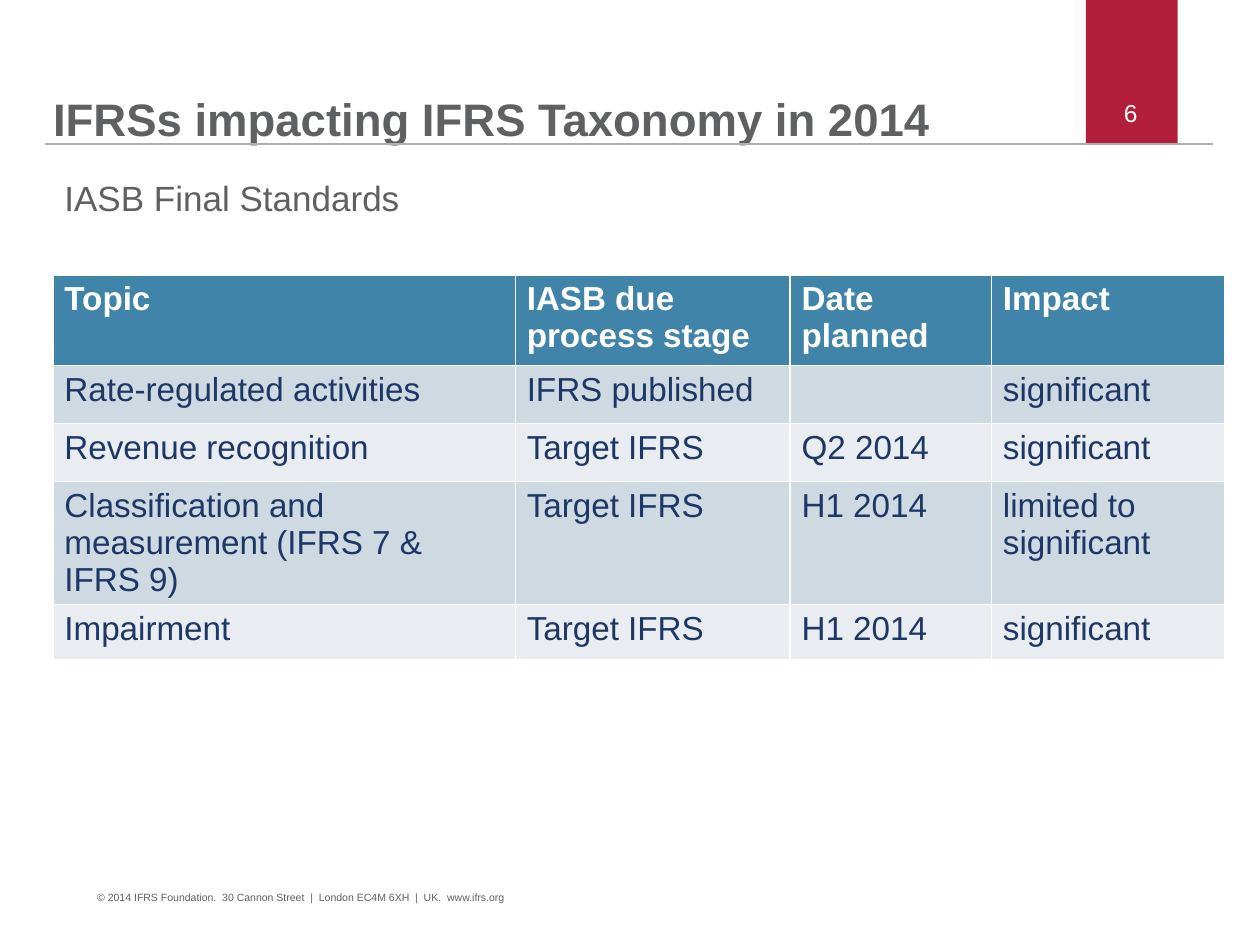
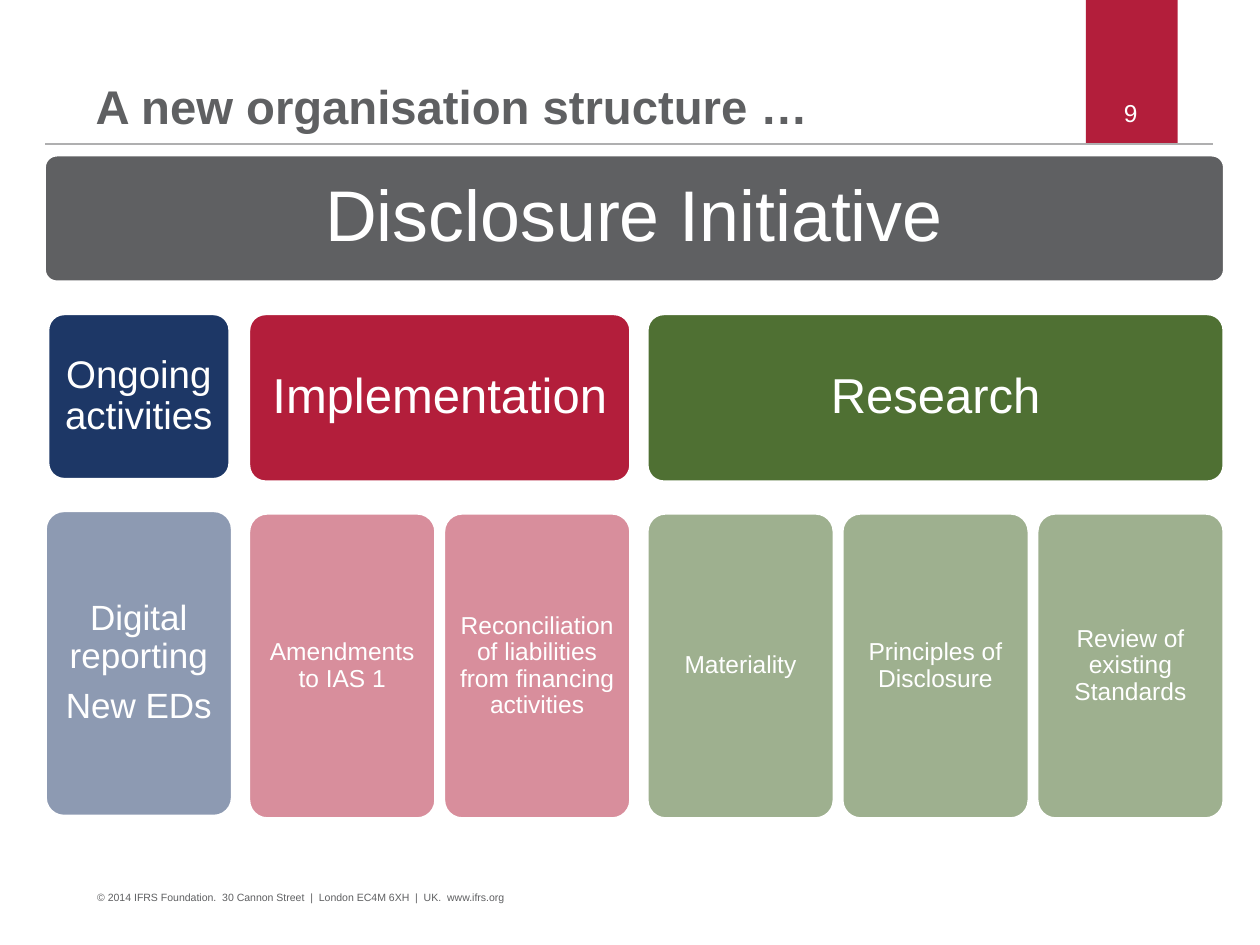
from lxml.etree import SubElement
from pptx import Presentation
from pptx.dml.color import RGBColor
from pptx.enum.shapes import MSO_CONNECTOR, MSO_SHAPE
from pptx.enum.text import MSO_ANCHOR, MSO_AUTO_SIZE, PP_ALIGN
from pptx.oxml.ns import qn
from pptx.util import Cm, Pt

FONT = "Arial"
HEX = {
    "white": "FFFFFF", "grey": "5F6062", "rule": "AFAFB0",
    "red": "B31E3B", "navy": "1D3766", "green": "4F7033",
    "head": "4184A9", "odd": "CFD9E2", "even": "E9EDF1",
}
FOOT = ("© 2014 IFRS Foundation.  30 Cannon Street  |  "
        "London EC4M 6XH  |  UK.  www.ifrs.org")

# Slide 6: table of standards
INTRO = "IASB Final Standards"
ROWS = [
    ("Topic", "IASB due process stage", "Date planned", "Impact"),
    ("Rate-regulated activities", "IFRS published", "", "significant"),
    ("Revenue recognition", "Target IFRS", "Q2 2014", "significant"),
    ("Classification and measurement (IFRS 7 & IFRS 9)", "Target IFRS",
     "H1 2014", "limited to significant"),
    ("Impairment", "Target IFRS", "H1 2014", "significant"),
]
WIDTHS = (9.32, 5.54, 4.06, 4.7)
HEIGHTS = (1.83, 1.17, 1.17, 1.83, 1.12)

# Slide 9: organisation chart, lengths in cm
TOPIC = "Disclosure Initiative"
GROUPS = [
    dict(name="Ongoing activities", color="navy", alpha=50, size=22,
         inset=0.22, trim=0.05, small=20, pad=0.2,
         cards=[["Digital reporting", "New EDs"]]),
    dict(name="Implementation", color="red", alpha=50, size=28,
         inset=0.3, trim=0, small=14, pad=0.15,
         cards=[["Amendments to IAS 1"],
                ["Reconciliation of liabilities from financing activities"]]),
    dict(name="Research", color="green", alpha=55, size=28,
         inset=0.3, trim=0, small=14, pad=0.15,
         cards=[["Materiality"], ["Principles of Disclosure"],
                ["Review of existing Standards"]]),
]
LEFT, WIDE, GAP, SPLIT = 0.91, 3.78, 0.15, 0.32
HEAD_TOP, HEAD_TALL = 6.32, 3.4
CARD_TOP, CARD_TALL = 10.34, 6.17


def rgb(name):
    return RGBColor.from_string(HEX[name])


def write(frame, text, size, color="white", bold=False, align=PP_ALIGN.LEFT,
          anchor=MSO_ANCHOR.TOP, inset=None, lead=None, gap=0):
    """Fill a text frame; inset None leaves the frame itself alone."""
    if inset is not None:
        frame.word_wrap = True
        frame.auto_size = MSO_AUTO_SIZE.NONE
        frame.vertical_anchor = anchor
        frame.margin_left = frame.margin_right = Cm(inset)
        frame.margin_top = frame.margin_bottom = Cm(inset)
    lines = [text] if isinstance(text, str) else text
    for n, line in enumerate(lines):
        para = frame.add_paragraph() if n else frame.paragraphs[0]
        para.alignment = align
        if lead:
            para.line_spacing = lead
        if n:
            para.space_before = Pt(gap)
        run = para.add_run()
        run.text = line
        font = run.font
        font.name, font.size, font.bold = FONT, Pt(size), bold
        font.color.rgb = rgb(color)


def label(slide, box, text, size, **style):
    area = slide.shapes.add_textbox(*map(Cm, box))
    write(area.text_frame, text, size, **{"inset": 0, **style})


def block(slide, kind, box, color, alpha=100):
    shape = slide.shapes.add_shape(kind, *map(Cm, box))
    shape.shadow.inherit = False
    shape.fill.solid()
    shape.fill.fore_color.rgb = rgb(color)
    if alpha < 100:
        tint = next(shape._element.iter(qn("a:srgbClr")))
        SubElement(tint, qn("a:alpha"), val=str(alpha * 1000))
    shape.line.fill.background()
    return shape


def card(slide, box, text, size, color, inset, alpha=100):
    """Rounded box with a white edge and centred text."""
    shape = block(slide, MSO_SHAPE.ROUNDED_RECTANGLE, box, color, alpha)
    shape.adjustments[0] = 0.1
    shape.line.color.rgb = rgb("white")
    shape.line.width = Pt(2)
    write(shape.text_frame, text, size, align=PP_ALIGN.CENTER, inset=inset,
          anchor=MSO_ANCHOR.MIDDLE, lead=0.9, gap=size * 0.35)


def page(deck, title, size, box, number):
    """Add a slide with title, band, rule, footer and page number."""
    slide = deck.slides.add_slide(deck.slide_layouts[5])
    block(slide, MSO_SHAPE.RECTANGLE, (21.89, 0, 1.85, 2.9), "red")
    rule = slide.shapes.add_connector(
        MSO_CONNECTOR.STRAIGHT, Cm(0.91), Cm(2.9), Cm(24.46), Cm(2.9))
    rule.line.color.rgb = rgb("rule")
    rule.line.width = Pt(1.2)
    SubElement(rule._element.spPr, qn("a:effectLst"))
    head = slide.shapes.title
    head.left, head.top, head.width, head.height = map(Cm, box)
    write(head.text_frame, title, size, color="grey", bold=True, inset=0,
          anchor=MSO_ANCHOR.BOTTOM, lead=0.9)
    label(slide, (1.96, 17.96, 15.7, 0.53), FOOT, 6, color="grey")
    label(slide, (21.92, 1.98, 1.75, 0.56), number, 14,
          align=PP_ALIGN.CENTER)
    return slide


def grid(slide):
    """Add the table of standards."""
    area = (1.07, 5.54, sum(WIDTHS), sum(HEIGHTS))
    table = slide.shapes.add_table(
        len(ROWS), len(WIDTHS), *map(Cm, area)).table
    for col, wide in zip(table.columns, WIDTHS):
        col.width = Cm(wide)
    for r, (row, tall) in enumerate(zip(ROWS, HEIGHTS)):
        table.rows[r].height = Cm(tall)
        fill = "head" if r == 0 else "odd" if r % 2 else "even"
        for c, text in enumerate(row):
            cell = table.cell(r, c)
            cell.fill.solid()
            cell.fill.fore_color.rgb = rgb(fill)
            cell.margin_left = cell.margin_right = Cm(0.23)
            cell.margin_top = cell.margin_bottom = Cm(0.12)
            if text:
                write(cell.text_frame, text, 19, bold=r == 0,
                      color="navy" if r else "white")


def chart(slide):
    """Add the topic bar, then each group head above its cards."""
    card(slide, (0.89, 3.12, 23.8, 2.57), TOPIC, 41, "grey", 0.43)
    left = LEFT
    for g in GROUPS:
        count, trim, color = len(g["cards"]), g["trim"], g["color"]
        span = count * WIDE + (count - 1) * GAP
        card(slide, (left + trim, HEAD_TOP, span - 2 * trim, HEAD_TALL - trim),
             g["name"], g["size"], color, g["inset"])
        for n, text in enumerate(g["cards"]):
            box = (left + n * (WIDE + GAP), CARD_TOP - trim, WIDE, CARD_TALL)
            card(slide, box, text, g["small"], color, g["pad"], g["alpha"])
        left += span + SPLIT


def main():
    deck = Presentation()
    deck.slide_width, deck.slide_height = Cm(25.4), Cm(19.05)

    slide = page(deck, "IFRSs impacting IFRS Taxonomy in 2014", 26,
                 (1.07, 0.74, 21.34, 2.21), "6")
    label(slide, (1.07, 3.45, 23.62, 1.07), INTRO, 20, color="grey",
          inset=0.23, anchor=MSO_ANCHOR.MIDDLE)
    grid(slide)

    slide = page(deck, "A new organisation structure …", 27,
                 (1.93, 0.51, 18.82, 2.21), "9")
    chart(slide)

    deck.save("out.pptx")


if __name__ == "__main__":
    main()
